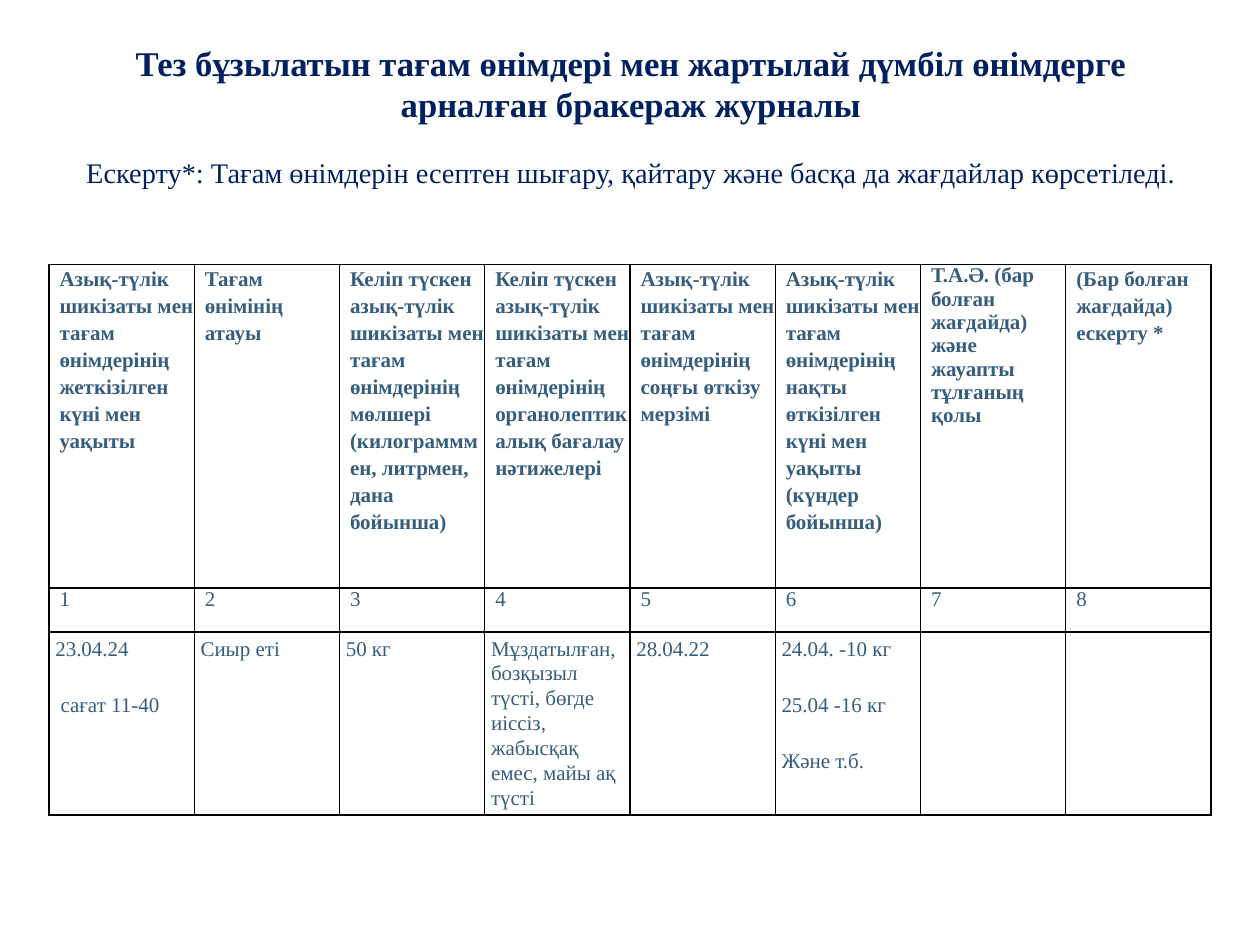
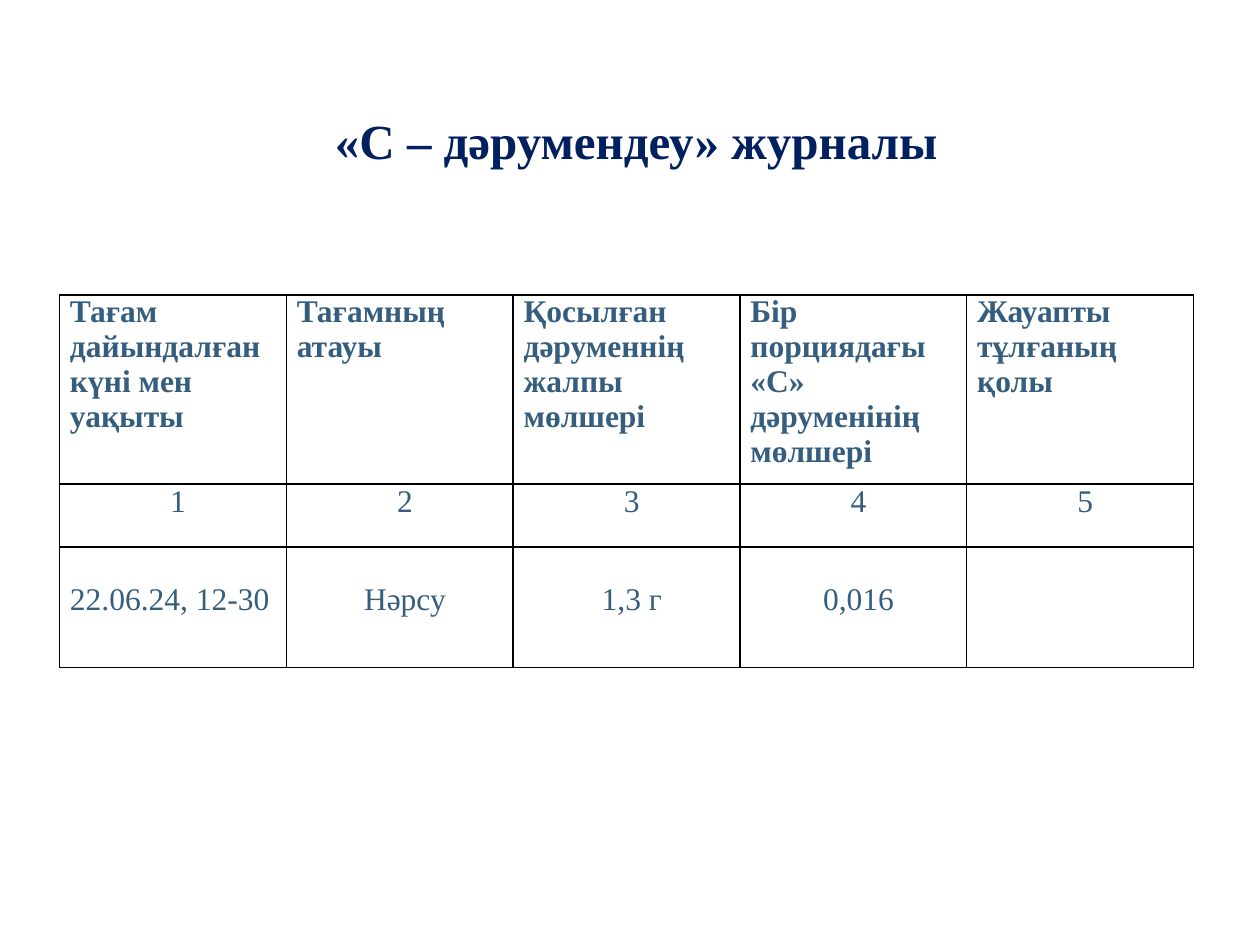
from dataclasses import dataclass, replace

from lxml.etree import SubElement
from pptx import Presentation
from pptx.dml.color import RGBColor
from pptx.enum.text import MSO_ANCHOR as Anchor, PP_ALIGN as Align
from pptx.oxml.ns import qn
from pptx.util import Pt

# Shared look
FONT = "Times New Roman"
NAVY = RGBColor(0x00, 0x20, 0x60)
STEEL = RGBColor(0x35, 0x5D, 0x7E)
BLACK = RGBColor(0x00, 0x00, 0x00)
WHITE = RGBColor(0xFF, 0xFF, 0xFF)
BORDER_WIDTH = 1
BORDER_SIDES = ("a:lnL", "a:lnR", "a:lnT", "a:lnB")


@dataclass(frozen=True)
class TextStyle:
    size: float
    color: RGBColor = STEEL
    bold: bool = False
    align: Align = Align.LEFT
    indent: float = 0
    line: float = 1.0  # a multiple of the line height
    exact_line: float = 0  # in points, replaces the multiple
    before: float = 0
    after: float = 0


@dataclass(frozen=True)
class Line:
    text: str
    style: TextStyle


@dataclass(frozen=True)
class Heading:
    box: tuple[float, float, float, float]
    inset_left: float
    inset_top: float
    lines: tuple[Line, ...]


@dataclass(frozen=True)
class Row:
    height: float
    style: TextStyle
    cells: tuple  # each cell: a string, a Line or a tuple of these
    inset_side: float = 0
    inset_top: float = 0


@dataclass(frozen=True)
class Journal:
    heading: Heading
    left: float
    top: float
    column_width: float
    rows: tuple[Row, ...]


def set_all(target, values: dict) -> None:
    for name, value in values.items():
        setattr(target, name, value)


def write_lines(frame, lines: list[Line]) -> None:
    for index, line in enumerate(lines):
        style = line.style
        para = frame.paragraphs[0] if index == 0 else frame.add_paragraph()
        set_all(para, {
            "alignment": style.align,
            "line_spacing": Pt(style.exact_line) if style.exact_line else style.line,
            "space_before": Pt(style.before),
            "space_after": Pt(style.after),
        })
        para._p.get_or_add_pPr().set("marL", str(Pt(style.indent)))
        span = para.add_run()
        span.text = line.text
        set_all(span.font, {"name": FONT, "size": Pt(style.size), "bold": style.bold})
        span.font.color.rgb = style.color


def add_borders(cell) -> None:
    properties = cell._tc.get_or_add_tcPr()
    for position, side in enumerate(BORDER_SIDES):
        border = SubElement(properties, qn(side), w=str(Pt(BORDER_WIDTH)))
        fill = SubElement(border, qn("a:solidFill"))
        SubElement(fill, qn("a:srgbClr"), val=str(BLACK))
        properties.insert(position, border)  # borders come before the fill


def cell_lines(content, style: TextStyle) -> list[Line]:
    items = content if isinstance(content, tuple) else (content,)
    return [item if isinstance(item, Line) else Line(item, style)
            for item in items if item]


def add_heading(page, heading: Heading) -> None:
    box = page.shapes.add_textbox(*map(Pt, heading.box))
    set_all(box.text_frame, {
        "word_wrap": True,
        "vertical_anchor": Anchor.TOP,
        "margin_left": Pt(heading.inset_left),
        "margin_top": Pt(heading.inset_top),
    })
    write_lines(box.text_frame, list(heading.lines))


def add_journal_table(page, journal: Journal) -> None:
    rows = journal.rows
    column_count = len(rows[0].cells)
    table = page.shapes.add_table(
        len(rows), column_count, Pt(journal.left), Pt(journal.top),
        Pt(journal.column_width * column_count), Pt(sum(row.height for row in rows)),
    ).table
    set_all(table, {"first_row": False, "horz_banding": False})
    for column in table.columns:
        column.width = Pt(journal.column_width)
    for row_index, row in enumerate(rows):
        table.rows[row_index].height = Pt(row.height)
        for column_index, content in enumerate(row.cells):
            cell = table.cell(row_index, column_index)
            set_all(cell, {
                "margin_left": Pt(row.inset_side),
                "margin_right": Pt(row.inset_side),
                "margin_top": Pt(row.inset_top),
                "margin_bottom": Pt(0),
            })
            cell.fill.solid()
            cell.fill.fore_color.rgb = WHITE
            add_borders(cell)
            write_lines(cell.text_frame, cell_lines(content, row.style))


# Text styles
TITLE = TextStyle(19.8, NAVY, bold=True, align=Align.CENTER)
NOTE = replace(TITLE, size=16.2, bold=False, before=17.5)
FOOD_HEADER = TextStyle(12, bold=True, indent=6, line=1.16)
FOOD_NUMBER = TextStyle(12, indent=6)
FOOD_ENTRY = TextStyle(12, exact_line=14.2, after=18)
VITAMIN_HEADER = TextStyle(18, bold=True, indent=6)
VITAMIN_ENTRY = TextStyle(18, align=Align.CENTER, indent=6)

# Slide 1: journal of perishable food
FOOD_JOURNAL = Journal(
    Heading((39.6, 20.16, 641.5, 129.6), 7.2, 3.6, (
        Line("Тез бұзылатын тағам өнімдері мен жартылай дүмбіл өнімдерге "
             "арналған бракераж журналы", TITLE),
        Line("Ескерту*: Тағам өнімдерін есептен шығару, қайтару және басқа да "
             "жағдайлар көрсетіледі.", NOTE),
    )),
    left=28, top=151, column_width=83,
    rows=(
        Row(185.1, FOOD_HEADER, (
            "Азық-түлік шикізаты мен тағам өнімдерінің жеткізілген күні мен уақыты",
            "Тағам өнімінің атауы",
            "Келіп түскен азық-түлік шикізаты мен тағам өнімдерінің мөлшері "
            "(килограмммен, литрмен, дана бойынша)",
            "Келіп түскен азық-түлік шикізаты мен тағам өнімдерінің "
            "органолептикалық бағалау нәтижелері",
            "Азық-түлік шикізаты мен тағам өнімдерінің соңғы өткізу мерзімі",
            "Азық-түлік шикізаты мен тағам өнімдерінің нақты өткізілген күні "
            "мен уақыты (күндер бойынша)",
            Line("Т.А.Ә. (бар болған жағдайда) және жауапты тұлғаның қолы",
                 replace(FOOD_HEADER, line=1.0)),
            "(Бар болған жағдайда) ескерту *",
        )),
        Row(25.1, FOOD_NUMBER, tuple(str(number) for number in range(1, 9))),
        Row(104.6, FOOD_ENTRY, (
            ("23.04.24", Line("сағат 11-40", replace(FOOD_ENTRY, indent=3))),
            "Сиыр еті",
            "50 кг",
            "Мұздатылған, бозқызыл түсті, бөгде иіссіз, жабысқақ емес, майы ақ түсті",
            "28.04.22",
            ("24.04. -10 кг", "25.04 -16 кг", "Және т.б."),
            "",
            "",
        ), inset_side=3.6, inset_top=2.2),
    ),
)

# Slide 2: journal of vitamin C enrichment
VITAMIN_JOURNAL = Journal(
    Heading((36, 55.4, 648, 78.5), 14.2, 8,
            (Line("«С – дәрумендеу» журналы", replace(TITLE, size=28)),)),
    left=34, top=168.5, column_width=129.6,
    rows=(
        Row(99.4, VITAMIN_HEADER, (
            "Тағам дайындалған күні мен уақыты",
            "Тағамның атауы",
            "Қосылған дәруменнің жалпы мөлшері",
            "Бір порциядағы «С» дәруменінің мөлшері",
            "Жауапты тұлғаның қолы",
        )),
        Row(36, VITAMIN_ENTRY, tuple(str(number) for number in range(1, 6))),
        Row(69, VITAMIN_ENTRY, (
            Line("22.06.24, 12-30", replace(VITAMIN_ENTRY, align=Align.LEFT)),
            "Нәрсу",
            "1,3 г",
            "0,016",
            "",
        ), inset_top=20),
    ),
)


def main() -> None:
    deck = Presentation()
    set_all(deck, {"slide_width": Pt(720), "slide_height": Pt(540)})
    for journal in (FOOD_JOURNAL, VITAMIN_JOURNAL):
        page = deck.slides.add_slide(deck.slide_layouts[6])
        add_heading(page, journal.heading)
        add_journal_table(page, journal)
    deck.save("out.pptx")


if __name__ == "__main__":
    main()
